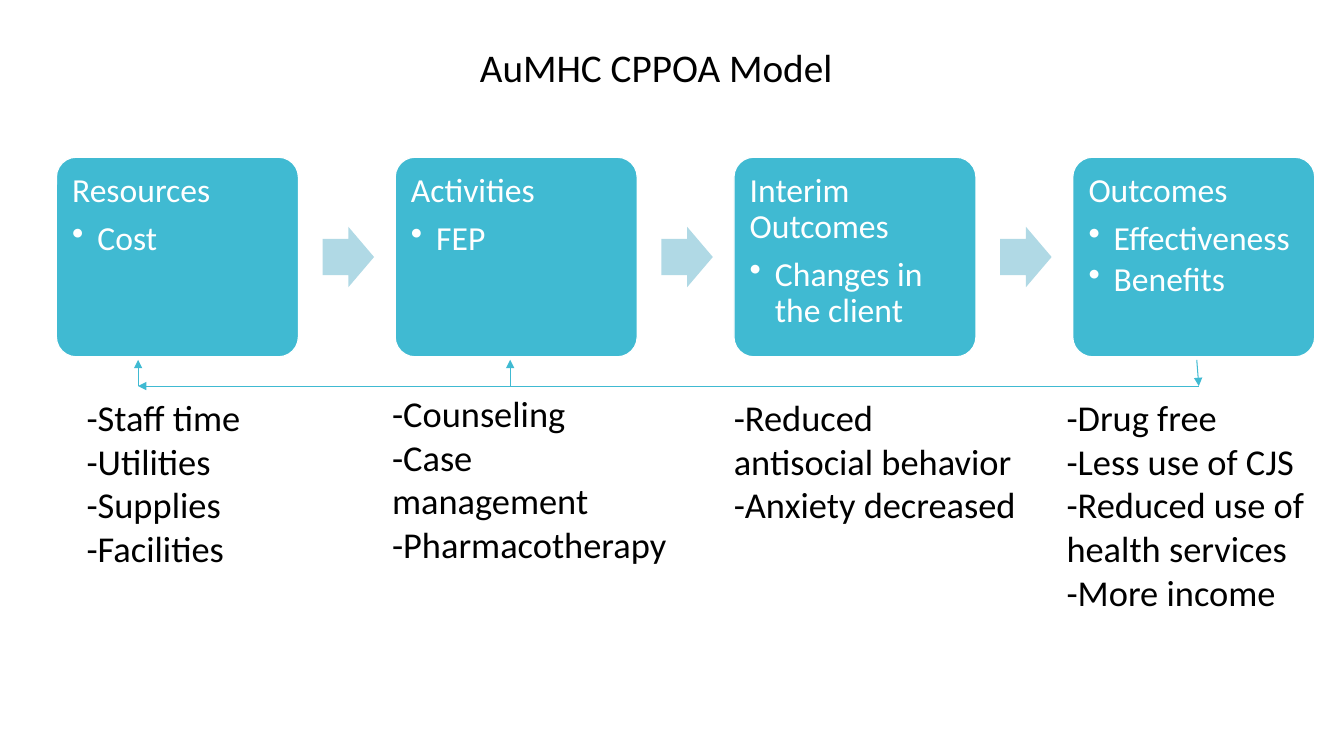
from lxml.etree import SubElement
from pptx import Presentation
from pptx.dml.color import RGBColor
from pptx.enum.shapes import MSO_CONNECTOR, MSO_SHAPE
from pptx.enum.text import MSO_ANCHOR, MSO_AUTO_SIZE, PP_ALIGN
from pptx.oxml.ns import qn
from pptx.util import Inches, Pt

TEAL, PALE, WHITE, BLACK = "40BAD2", "B0D9E5", "FFFFFF", "000000"


def color(hex_code):
    return RGBColor.from_string(hex_code)


class ModelSlide:
    font = "Calibri"

    def __init__(self, deck):
        self.slide = deck.slides.add_slide(deck.slide_layouts[5])

    def format_text(self, paragraph, size, hex_code):
        paragraph.alignment = PP_ALIGN.LEFT
        for run in paragraph.runs:
            run.font.name = self.font
            run.font.size = Pt(size)
            run.font.color.rgb = color(hex_code)

    def title(self, text, left, top, width, height):
        heading = self.slide.shapes.title
        heading.left, heading.top = Inches(left), Inches(top)
        heading.width, heading.height = Inches(width), Inches(height)
        frame = heading.text_frame
        frame.text = text
        frame.word_wrap = False
        frame.auto_size = MSO_AUTO_SIZE.NONE
        frame.vertical_anchor = MSO_ANCHOR.TOP
        self.format_text(frame.paragraphs[0], 28, BLACK)

    def block(self, kind, left, top, width, height, fill, adjustments):
        block = self.slide.shapes.add_shape(
            kind, Inches(left), Inches(top), Inches(width), Inches(height))
        block.shadow.inherit = False
        block.fill.solid()
        block.fill.fore_color.rgb = color(fill)
        block.line.fill.background()
        for index, value in enumerate(adjustments):
            block.adjustments[index] = value
        return block

    def stage(self, heading, points, left, top, width, height):
        card = self.block(MSO_SHAPE.ROUNDED_RECTANGLE, left, top, width, height, TEAL, [0.1])
        card.line.color.rgb = color(WHITE)
        card.line.width = Pt(0.85)
        frame = card.text_frame
        frame.word_wrap = True
        frame.vertical_anchor = MSO_ANCHOR.TOP
        frame.margin_left = frame.margin_right = Inches(0.1)
        frame.margin_top = frame.margin_bottom = Inches(0.1)
        frame.text = "\n".join([heading, *points])
        for index, paragraph in enumerate(frame.paragraphs):
            self.format_text(paragraph, 24, WHITE)
            paragraph.line_spacing = 0.9
            paragraph.space_after = Pt(3.6 if index else 8.4)
            if index:
                self.bullet(paragraph)

    def bullet(self, paragraph):
        paragraph.level = 1
        properties = paragraph._p.get_or_add_pPr()
        properties.set("marL", str(Inches(0.25)))
        properties.set("indent", str(-Inches(0.25)))
        SubElement(properties, qn("a:buChar")).set("char", "•")

    def details(self, items, left, top, width, height):
        box = self.slide.shapes.add_textbox(
            Inches(left), Inches(top), Inches(width), Inches(height))
        frame = box.text_frame
        frame.word_wrap = True
        frame.text = "\n".join(items)
        for paragraph in frame.paragraphs:
            self.format_text(paragraph, 26, BLACK)

    def arrow_line(self, start, end):
        link = self.slide.shapes.add_connector(
            MSO_CONNECTOR.STRAIGHT, *map(Inches, (*start, *end)))
        link.line.color.rgb = color(TEAL)
        link.line.width = Pt(0.75)
        SubElement(link.line._get_or_add_ln(), qn("a:tailEnd")).set("type", "triangle")
        SubElement(link._element.spPr, qn("a:effectLst"))


def main():
    deck = Presentation()
    deck.slide_width, deck.slide_height = Inches(13.33), Inches(7.5)
    model = ModelSlide(deck)
    model.title("AuMHC CPPOA Model", 4.66, 0.38, 3.85, 0.57)

    # Stages in a row, with a block arrow in each gap
    stages = [
        ("Resources", ["Cost"]),
        ("Activities", ["FEP"]),
        ("Interim Outcomes", ["Changes in the client"]),
        ("Outcomes", ["Effectiveness", "Benefits"]),
    ]
    for index, (heading, points) in enumerate(stages):
        left = 0.56 + 3.36 * index
        model.stage(heading, points, left, 1.56, 2.4, 1.98)
        if index < len(stages) - 1:
            model.block(MSO_SHAPE.RIGHT_ARROW, left + 2.64, 2.25, 0.51, 0.6, PALE, [0.6, 0.5])

    # Details under each stage
    model.details(["-Staff time", "-Utilities", "-Supplies", "-Facilities"],
                  0.76, 3.87, 1.92, 1.85)
    model.details(["-Counseling", "-Case management", "-Pharmacotherapy"],
                  3.79, 3.83, 3, 2.29)
    model.details(["-Reduced antisocial behavior", "-Anxiety decreased"],
                  7.18, 3.87, 3.04, 1.85)
    model.details(["-Drug free", "-Less use of CJS", "-Reduced use of health services",
                   "-More income"], 10.48, 3.87, 2.66, 2.73)

    # Feedback loop from outcomes back to activities and resources
    upper, lower = 3.57, 3.83
    resources_x, activities_x, outcomes_x = 1.37, 5.06, 11.89
    model.arrow_line((outcomes_x - 0.02, upper), (outcomes_x, lower))
    model.arrow_line((outcomes_x, lower), (resources_x, lower))
    for stage_x in (activities_x, resources_x):
        model.arrow_line((stage_x, lower), (stage_x, upper))

    deck.save("out.pptx")


if __name__ == "__main__":
    main()
